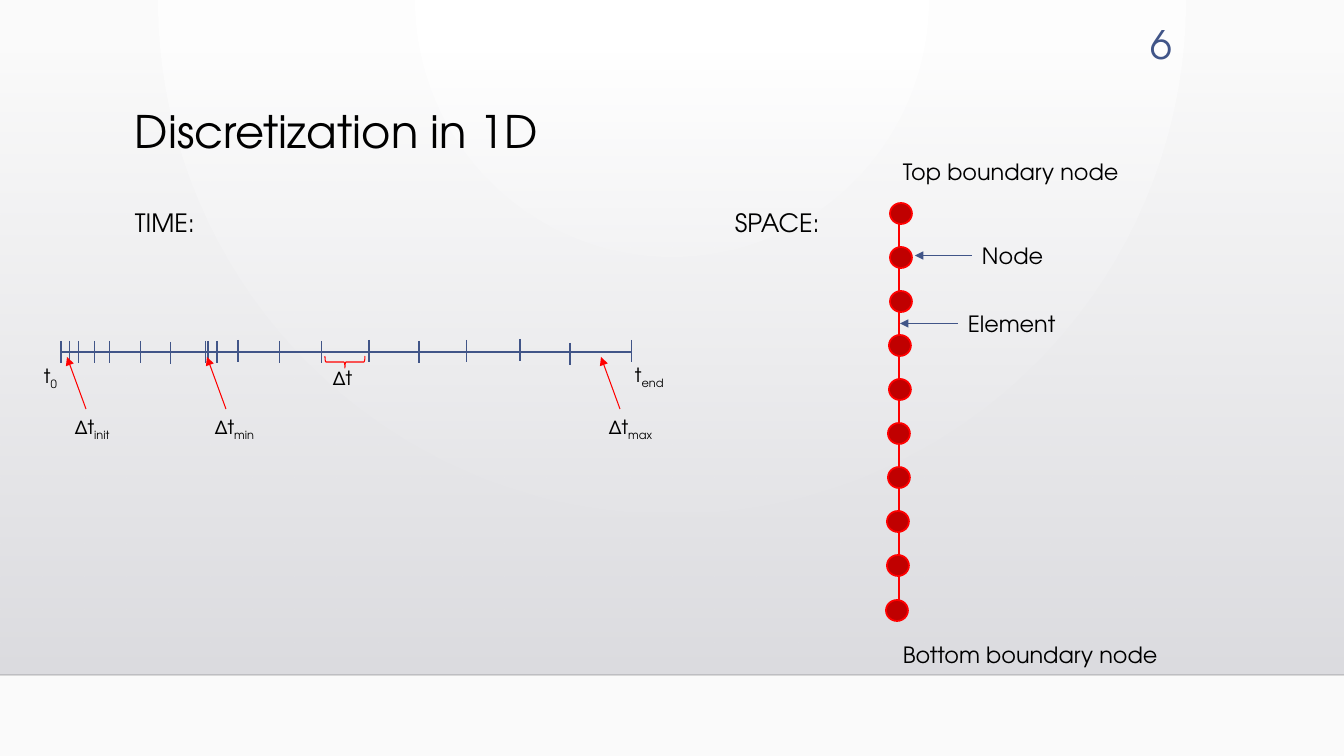
from lxml.etree import SubElement
from pptx import Presentation
from pptx.dml.color import RGBColor
from pptx.enum.shapes import MSO_CONNECTOR, MSO_SHAPE
from pptx.enum.text import MSO_ANCHOR, MSO_AUTO_SIZE, PP_ALIGN
from pptx.oxml import parse_xml
from pptx.oxml.ns import nsdecls, qn
from pptx.util import Emu, Pt

BLACK = RGBColor(0x00, 0x00, 0x00)
BLUE = RGBColor(0x41, 0x55, 0x88)
RED = RGBColor(0xFF, 0x00, 0x00)
DARK_RED = RGBColor(0xC0, 0x00, 0x00)
SHADE_TOP = RGBColor(0xDC, 0xDC, 0xE0)
SHADE_BOTTOM = RGBColor(0xDE, 0xDE, 0xE2)

FONT = "TeX Gyre Adventor"
EMU_PER_PX = 914400 / 100.8
WIDTH, HEIGHT = 1344, 756
FLOOR = 675

AXIS_Y = 352
TICK_HEIGHT = 22
TICKS = [
    (61, 341), (70, 341), (79, 341), (95, 341), (110, 341), (141, 341),
    (171, 342), (206, 341), (208, 341), (217, 341), (238, 340), (280, 341),
    (322, 341), (369, 340), (419, 341), (467, 340), (520, 339), (570, 343),
    (632, 340),
]
TIME_LABELS = [
    ("t", "0", 34, 359, 36),
    ("t", "end", 625, 358, 54),
    ("∆t", "", 323, 361, 46),
    ("∆t", "init", 65, 410, 60),
    ("∆t", "min", 205, 410, 65),
    ("∆t", "max", 599, 410, 70),
]
STEP_ARROWS = [(86, 67), (226, 207), (620, 601)]
NODE_COUNT = 10


def px(value):
    return Emu(round(value * EMU_PER_PX))


def set_alpha(shape, percent):
    color = next(shape.element.spPr.iter(qn("a:srgbClr")))
    SubElement(color, qn("a:alpha")).set("val", str(percent * 1000))


def add_background(page):
    page.element.cSld.insert(0, parse_xml(
        f'<p:bg {nsdecls("p", "a")}><p:bgPr><a:gradFill rotWithShape="1"><a:gsLst>'
        '<a:gs pos="0"><a:srgbClr val="FFFFFF"/></a:gs>'
        '<a:gs pos="100000"><a:srgbClr val="FAFAFA"/></a:gs></a:gsLst>'
        '<a:path path="circle"><a:fillToRect l="43000" t="0" r="43000" b="100000"/></a:path>'
        '</a:gradFill><a:effectLst/></p:bgPr></p:bg>'))


def add_line(shapes, start, end, color, weight, arrow=False):
    line = shapes.add_connector(MSO_CONNECTOR.STRAIGHT, *map(px, start + end))
    line.line.color.rgb = color
    line.line.width = Pt(weight)
    properties = line.element.spPr
    if arrow:
        SubElement(properties.find(qn("a:ln")), qn("a:tailEnd")).set("type", "triangle")
    SubElement(properties, qn("a:effectLst"))
    return line


def add_shape(shapes, kind, left, top, width, height):
    shape = shapes.add_shape(kind, px(left), px(top), px(width), px(height))
    shape.shadow.inherit = False
    return shape


def add_text(page, text, left, top, width, height, size, color=BLACK, subscript="", wrap=False):
    box = page.shapes.add_textbox(px(left), px(top), px(width), px(height))
    frame = box.text_frame
    frame.word_wrap = wrap
    frame.auto_size = MSO_AUTO_SIZE.NONE if wrap else MSO_AUTO_SIZE.SHAPE_TO_FIT_TEXT
    para = frame.paragraphs[0]
    for content, baseline in ((text, 0), (subscript, -25)):
        if content:
            span = para.add_run()
            span.text = content
            span.font.name = FONT
            span.font.size = Pt(size)
            span.font.color.rgb = color
            if baseline:
                span.font._element.set("baseline", str(baseline * 1000))
    return box


def add_backdrop(page):
    add_background(page)
    shade = add_shape(page.shapes, MSO_SHAPE.RECTANGLE, 0, 51, WIDTH, FLOOR - 51)
    shade.fill.gradient()
    shade.fill.gradient_angle = 270
    for stop, color in zip(shade.fill.gradient_stops, (SHADE_TOP, SHADE_BOTTOM)):
        stop.color.rgb = color
    shade.line.fill.background()
    set_alpha(shade, 0)
    floor_line = add_line(page.shapes, (0, FLOOR), (WIDTH, FLOOR), BLACK, 1)
    set_alpha(floor_line, 20)


def add_headings(page):
    title = add_text(page, "Discretization in 1D", 125, 105, 1058, 116, 32, wrap=True)
    title.text_frame.paragraphs[0].line_spacing = 0.9
    number = add_text(page, "6", 1092, 16, 90, 55, 28, BLUE, wrap=True)
    number.text_frame.vertical_anchor = MSO_ANCHOR.MIDDLE
    number.text_frame.paragraphs[0].alignment = PP_ALIGN.RIGHT
    add_text(page, "TIME:", 125, 202, 81, 40, 18)
    add_text(page, "SPACE:", 725, 202, 108, 40, 18)


def add_node_column(page):
    column = page.shapes.add_group_shape().shapes
    add_line(column, (899, 208), (899, 613), RED, 2)
    for index in range(NODE_COUNT):
        left = 890 - index * 4 // 9
        top = 203 + index * 397 // 9
        node = add_shape(column, MSO_SHAPE.OVAL, left, top, 22, 21)
        node.fill.solid()
        node.fill.fore_color.rgb = DARK_RED
        node.line.color.rgb = RED
        node.line.width = Pt(1.25)


def add_space_labels(page):
    add_text(page, "Top boundary node", 893, 153, 239, 37, 16)
    add_text(page, "Bottom boundary node", 893, 636, 278, 37, 16)
    for text, left, top, width, tip in (
        ("Element", 958, 305, 109, 900),
        ("Node", 972, 237, 83, 915),
    ):
        label = add_text(page, text, left, top, width, 37, 16)
        middle = top + 19
        arrow = add_line(page.shapes, (left, middle), (tip, middle), BLUE, 0.75, arrow=True)
        arrow.begin_connect(label, 1)
        arrow.end_y = arrow.begin_y


def add_timeline(page):
    add_line(page.shapes, (62, AXIS_Y), (632, AXIS_Y), BLUE, 1.5)
    for x, top in TICKS:
        add_line(page.shapes, (x, top), (x, top + TICK_HEIGHT), BLUE, 0.75)
    for text, subscript, left, top, width in TIME_LABELS:
        add_text(page, text, left, top, width, 34, 14, subscript=subscript)
    brace = add_shape(page.shapes, MSO_SHAPE.LEFT_BRACE, 339, 342, 12, 40)
    brace.rotation = 270
    brace.fill.background()
    brace.line.color.rgb = RED
    brace.line.width = Pt(0.75)
    for start_x, tip_x in STEP_ARROWS:
        add_line(page.shapes, (start_x, 409), (tip_x, 357), RED, 0.75, arrow=True)


def main():
    deck = Presentation()
    deck.slide_width, deck.slide_height = px(WIDTH), px(HEIGHT)
    page = deck.slides.add_slide(deck.slide_layouts[6])
    add_backdrop(page)
    add_headings(page)
    add_node_column(page)
    add_space_labels(page)
    add_timeline(page)
    deck.save("out.pptx")


if __name__ == "__main__":
    main()
